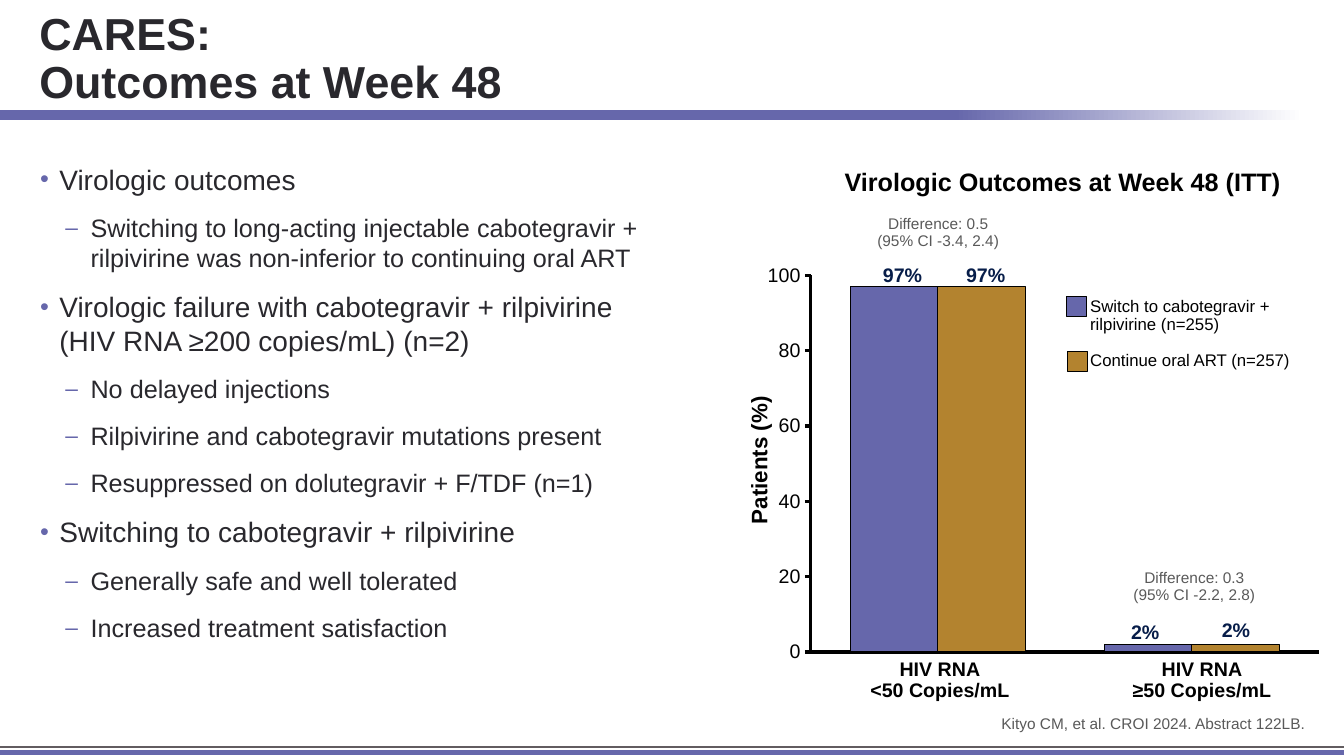
from lxml import etree
from pptx import Presentation
from pptx.chart.data import CategoryChartData
from pptx.dml.color import RGBColor
from pptx.enum.chart import XL_CHART_TYPE as Kind, XL_TICK_LABEL_POSITION as Label, XL_TICK_MARK as Tick
from pptx.enum.shapes import MSO_CONNECTOR as Conn, MSO_SHAPE as Shape
from pptx.enum.text import MSO_ANCHOR as Anchor, PP_ALIGN as Align
from pptx.oxml import parse_xml
from pptx.oxml.ns import nsdecls, qn
from pptx.util import Inches, Pt

WIDE, HIGH = Inches(13.333), Inches(7.5)
COLS, ROWS = 160, 90
FONT = "Arial"
BLACK, WHITE, INK, GRAY, NAVY = "000000", "FFFFFF", "29282D", "595959", "071D49"
PURPLE, GOLD, RULE = "6667AB", "B3832F", "625C60"

BULLETS = [
    (0, "Virologic outcomes"),
    (1, "Switching to long-acting injectable cabotegravir + rilpivirine "
        "was non-inferior to continuing oral ART"),
    (0, "Virologic failure with cabotegravir + rilpivirine\n(HIV RNA ≥200 copies/mL) (n=2)"),
    (1, "No delayed injections"),
    (1, "Rilpivirine and cabotegravir mutations present"),
    (1, "Resuppressed on dolutegravir + F/TDF (n=1)"),
    (0, "Switching to cabotegravir + rilpivirine"),
    (1, "Generally safe and well tolerated"),
    (1, "Increased treatment satisfaction"),
]
# Per level: size, mark, left margin, hanging indent
LEVELS = [(20, "•", 0.19, 0.19), (18, "–", 0.5, 0.25)]


def rgb(code):
    return RGBColor.from_string(code)


def grid(x, y, w, h):
    """Turn columns and rows into slide lengths."""
    return (int(WIDE * x / COLS), int(HIGH * y / ROWS),
            int(WIDE * w / COLS), int(HIGH * h / ROWS))


def style(font, size, color, bold=False):
    font.name, font.size, font.bold = FONT, Pt(size), bold
    font.color.rgb = rgb(color)


def write(para, text, size, color, bold=False):
    for i, line in enumerate(text.split("\n")):
        if i:
            para.add_line_break()
        run = para.add_run()
        run.text = line
        style(run.font, size, color, bold)


def frame(slide, box):
    shape = slide.shapes.add_textbox(*grid(*box))
    shape.text_frame.word_wrap = True
    return shape


def paras(body, count):
    return [body.paragraphs[0]] + [body.add_paragraph() for _ in range(count - 1)]


def label(slide, box, lines, size, color, bold=False, align=Align.CENTER, pitch=0.9, gap=0):
    shape = frame(slide, box)
    for i, (para, line) in enumerate(zip(paras(shape.text_frame, len(lines)), lines)):
        para.alignment, para.line_spacing = align, pitch
        para.space_before = Pt(gap if i else 0)
        write(para, line, size, color, bold)
    return shape


def bullets(slide, box):
    body = frame(slide, box).text_frame
    for para, (level, text) in zip(paras(body, len(BULLETS)), BULLETS):
        size, mark, left, hang = LEVELS[level]
        para.level, para.space_before = level, Pt(12)
        props = para._p.get_or_add_pPr()
        props.set("marL", str(Inches(left)))
        props.set("indent", str(-Inches(hang)))
        for xml in (f'<a:buClr {nsdecls("a")}><a:srgbClr val="{PURPLE}"/></a:buClr>',
                    f'<a:buSzPct {nsdecls("a")} val="90000"/>',
                    f'<a:buFont {nsdecls("a")} typeface="{FONT}"/>',
                    f'<a:buChar {nsdecls("a")} char="{mark}"/>'):
            props.append(parse_xml(xml))
        write(para, text, size, INK)


def block(slide, box):
    shape = slide.shapes.add_shape(Shape.RECTANGLE, *grid(*box))
    shape.shadow.inherit = False
    return shape


def band(slide, box):
    shape = block(slide, box)
    shape.line.fill.background()
    shape.fill.gradient()
    shape.fill.gradient_angle = 180
    for stop, (place, color) in zip(shape.fill.gradient_stops, [(0.03, WHITE), (0.29, PURPLE)]):
        stop.position, stop.color.rgb = place, rgb(color)


def paint(part, color):
    """Solid fill with a thin black edge."""
    part.fill.solid()
    part.fill.fore_color.rgb = rgb(color)
    part.line.color.rgb, part.line.width = rgb(BLACK), Pt(0.75)


def rule(slide, row, color, width):
    x, y, w, _ = grid(0, row, COLS, 0)
    line = slide.shapes.add_connector(Conn.STRAIGHT, x, y, x + w, y)
    line.line.color.rgb, line.line.width = rgb(color), Pt(width)
    etree.SubElement(line._element.spPr, qn("a:effectLst"))


def columns(slide, box):
    data = CategoryChartData()
    data.categories = ["1", "2"]
    for name in ("Series 1", "Series 2"):
        data.add_series(name, (97, 2))
    chart = slide.shapes.add_chart(Kind.COLUMN_CLUSTERED, *grid(*box), data).chart
    chart.has_legend = chart.has_title = False
    style(chart.font, 14, BLACK)
    plot = chart.plots[0]
    plot.gap_width, plot.overlap, plot.vary_by_categories = 91, 0, False
    for series, color in zip(plot.series, (PURPLE, GOLD)):
        paint(series.format, color)
    cats, vals = chart.category_axis, chart.value_axis
    for axis, tick in ((cats, Tick.NONE), (vals, Tick.OUTSIDE)):
        axis.has_major_gridlines = False
        axis.major_tick_mark, axis.minor_tick_mark = tick, Tick.NONE
        axis.format.line.color.rgb, axis.format.line.width = rgb(BLACK), Pt(2.25)
    cats.tick_label_position = Label.NONE
    vals.minimum_scale, vals.maximum_scale, vals.major_unit = 0, 100, 20
    style(vals.tick_labels.font, 14, BLACK)
    # Fix the plot area inside the chart frame
    area = chart._chartSpace.chart.plotArea
    for old in area.findall(qn("c:layout")):
        area.remove(old)
    sides = "".join(f'<c:{side} val="{share}"/>' for side, share in
                    (("layoutTarget", "inner"), ("xMode", "edge"), ("yMode", "edge"),
                     ("x", 0.097), ("y", 0.046), ("w", 0.886), ("h", 0.908)))
    area.insert(0, parse_xml(f'<c:layout {nsdecls("c")}><c:manualLayout>{sides}'
                             '</c:manualLayout></c:layout>'))


def main():
    deck = Presentation()
    deck.slide_width, deck.slide_height = WIDE, HIGH
    slide = deck.slides.add_slide(deck.slide_layouts[6])

    band(slide, (0, 13.1, COLS, 1.2))
    rule(slide, 88.9, RULE, 1.75)
    rule(slide, 89.6, PURPLE, 3.25)
    title = label(slide, (3.5, 2.5, 153.8, 11), ["CARES:\nOutcomes at Week 48"],
                  32, INK, True, Align.LEFT)
    title.text_frame.vertical_anchor = Anchor.BOTTOM
    bullets(slide, (3.6, 18.7, 82.2, 63.6))

    label(slide, (68.3, 52.6, 44, 4.4), ["Patients (%)"], 16, BLACK, True, pitch=1).rotation = 270
    label(slide, (97, 19.8, 59, 4.3), ["Virologic Outcomes at Week 48 (ITT)"],
          18, BLACK, True, pitch=0.85)
    columns(slide, (89.9, 30.5, 68.3, 49.4))
    for x, w, sign in ((101.4, 21, "<"), (129.8, 26.6, "≥")):
        label(slide, (x, 77.9, w, 6.4), ["HIV RNA", f"{sign}50 Copies/mL"], 14, BLACK, True)
    for x, y, w, share in ((102.7, 31.2, 9.5, 97), (111.6, 31.1, 11.5, 97),
                           (131.8, 73.6, 9.1, 2), (141.4, 73.4, 11.5, 2)):
        label(slide, (x, y, w, 3.6), [f"{share}%"], 14, NAVY, True, pitch=0.85)
    for x, y, gap, span in ((102.7, 25.2, 0.5, "-3.4, 2.4"), (133.2, 67.3, 0.3, "-2.2, 2.8")):
        label(slide, (x, y, 18, 5.2), [f"Difference: {gap}", f"(95% CI {span})"], 11, GRAY)

    label(slide, (128.6, 34.9, 27.9, 10),
          ["Switch to cabotegravir + rilpivirine (n=255)", "Continue oral ART (n=257)"],
          12, BLACK, align=Align.LEFT, gap=12.5)
    for x, y, color in ((127, 35.3, PURPLE), (127.1, 41.8, GOLD)):
        paint(block(slide, (x, y, 2.4, 2.4)), color)
    label(slide, (80, 84.7, 76.6, 3.2), ["Kityo CM, et al. CROI 2024. Abstract 122LB."],
          11, GRAY, align=Align.RIGHT)
    deck.save("out.pptx")


if __name__ == "__main__":
    main()
